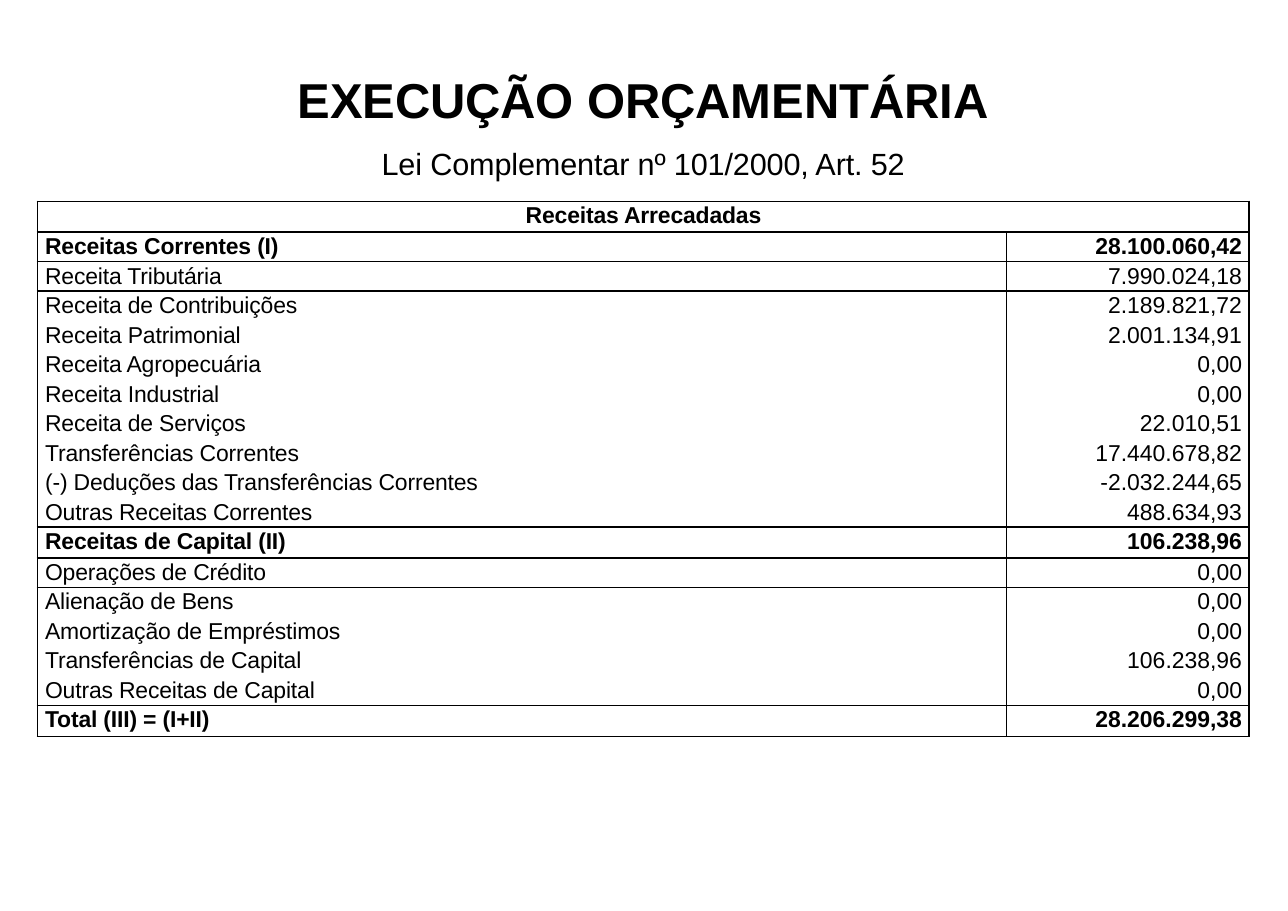
from dataclasses import dataclass

from lxml import etree
from pptx import Presentation
from pptx.dml.color import RGBColor
from pptx.enum.text import MSO_ANCHOR, MSO_AUTO_SIZE, PP_ALIGN
from pptx.oxml.ns import qn
from pptx.util import Cm, Pt

LEFT, CENTER, RIGHT = PP_ALIGN.LEFT, PP_ALIGN.CENTER, PP_ALIGN.RIGHT
TOP = MSO_ANCHOR.TOP
FIXED_SIZE = MSO_AUTO_SIZE.NONE
TITLE_ONLY = 5
PLAIN_TABLE_STYLE = "{2D5ABB26-0587-4C30-8999-92F81FD0307C}"


@dataclass(frozen=True)
class Theme:
    font: str = "Arial"
    ink: RGBColor = RGBColor(0, 0, 0)
    paper: RGBColor = RGBColor(255, 255, 255)
    title: Pt = Pt(32)
    subtitle: Pt = Pt(20)
    body: Pt = Pt(15)
    body_line: Pt = Pt(17.8)
    rule: Pt = Pt(1)
    tracking: int = -10


THEME = Theme()

TABLE_HEADING = "Receitas Arrecadadas"
REVENUE_GROUPS = [
    (("Receitas Correntes (I)", "28.100.060,42"), [
        ("Receita Tributária", "7.990.024,18"),
        ("Receita de Contribuições", "2.189.821,72"),
        ("Receita Patrimonial", "2.001.134,91"),
        ("Receita Agropecuária", "0,00"),
        ("Receita Industrial", "0,00"),
        ("Receita de Serviços", "22.010,51"),
        ("Transferências Correntes", "17.440.678,82"),
        ("(-) Deduções das Transferências Correntes", "-2.032.244,65"),
        ("Outras Receitas Correntes", "488.634,93"),
    ]),
    (("Receitas de Capital (II)", "106.238,96"), [
        ("Operações de Crédito", "0,00"),
        ("Alienação de Bens", "0,00"),
        ("Amortização de Empréstimos", "0,00"),
        ("Transferências de Capital", "106.238,96"),
        ("Outras Receitas de Capital", "0,00"),
    ]),
    (("Total (III) = (I+II)", "28.206.299,38"), []),
]


def apply(target, formats):
    for name, value in formats.items():
        setattr(target, name, value)


def write_text(frame, text, size, align, bold=False, tracking=THEME.tracking):
    paragraph = frame.paragraphs[0]
    paragraph.alignment = align
    run = paragraph.add_run()
    run.text = text
    apply(run.font, {"name": THEME.font, "size": size, "bold": bold})
    run.font.color.rgb = THEME.ink
    run._r.get_or_add_rPr().set("spc", str(tracking))
    return paragraph


def write_heading(box, text, size, inset, bold=False):
    frame = box.text_frame
    apply(frame, {
        "margin_left": 0, "margin_right": 0, "margin_bottom": 0,
        "margin_top": inset, "vertical_anchor": TOP,
        "auto_size": FIXED_SIZE, "word_wrap": True,
    })
    write_text(frame, text, size, CENTER, bold)


def add_title(slide, text):
    title = slide.shapes.title
    apply(title, {"left": Cm(6.5), "top": Cm(1.45),
                  "width": Cm(16.66), "height": Cm(1.42)})
    write_heading(title, text, THEME.title, Cm(0.15), bold=True)


def add_subtitle(slide, text):
    subtitle = slide.shapes.add_textbox(Cm(8.7), Cm(3.25), Cm(12.26), Cm(0.92))
    write_heading(subtitle, text, THEME.subtitle, Cm(0.1))


def draw_borders(cell, edges):
    properties = cell._tc.get_or_add_tcPr()
    for position, edge in enumerate(edges):
        line = etree.Element(qn(f"a:ln{edge}"), w=str(THEME.rule))
        fill = etree.SubElement(line, qn("a:solidFill"))
        etree.SubElement(fill, qn("a:srgbClr"), val=str(THEME.ink))
        properties.insert(position, line)


def fill_cell(cell, text, align, bold, edges):
    apply(cell, {
        "margin_left": Cm(0.18), "margin_right": Cm(0.16),
        "margin_top": 0, "margin_bottom": 0, "vertical_anchor": TOP,
    })
    cell.fill.solid()
    cell.fill.fore_color.rgb = THEME.paper
    draw_borders(cell, edges)
    if text:
        tracking = 0 if align == RIGHT else THEME.tracking
        paragraph = write_text(cell.text_frame, text, THEME.body, align, bold, tracking)
        paragraph.line_spacing = THEME.body_line


def list_rows():
    rows = [(TABLE_HEADING, "", True)]
    for summary, details in REVENUE_GROUPS:
        rows.append((*summary, True))
        rows += [(*detail, False) for detail in details]
    return rows


def add_revenue_table(slide):
    rows = list_rows()
    strong = [bold for _, _, bold in rows]
    widths = [Cm(22.35), Cm(5.59)]
    frame = slide.shapes.add_table(
        len(rows), len(widths), Cm(0.86), Cm(4.64), sum(widths), Cm(0.68) * len(rows))
    table = frame.table
    apply(table, {"first_row": False, "horz_banding": False})
    table._tbl.tblPr.find(qn("a:tableStyleId")).text = PLAIN_TABLE_STYLE
    for column, width in zip(table.columns, widths):
        column.width = width
    table.cell(0, 0).merge(table.cell(0, 1))

    for index, (label, amount, bold) in enumerate(rows):
        tall = bold and index != 1
        table.rows[index].height = Cm(0.71) if tall else Cm(0.68)
        edges = ["L", "R"]
        if bold or strong[index - 1]:
            edges.append("T")
        if bold or strong[index + 1]:
            edges.append("B")
        label_align = CENTER if index == 0 else LEFT
        fill_cell(table.cell(index, 0), label, label_align, bold, edges)
        fill_cell(table.cell(index, 1), amount, RIGHT, bold, edges)


def main():
    deck = Presentation()
    apply(deck, {"slide_width": Cm(29.7), "slide_height": Cm(21)})
    slide = deck.slides.add_slide(deck.slide_layouts[TITLE_ONLY])
    add_title(slide, "EXECUÇÃO ORÇAMENTÁRIA")
    add_subtitle(slide, "Lei Complementar nº 101/2000, Art. 52")
    add_revenue_table(slide)
    deck.save("out.pptx")


if __name__ == "__main__":
    main()
